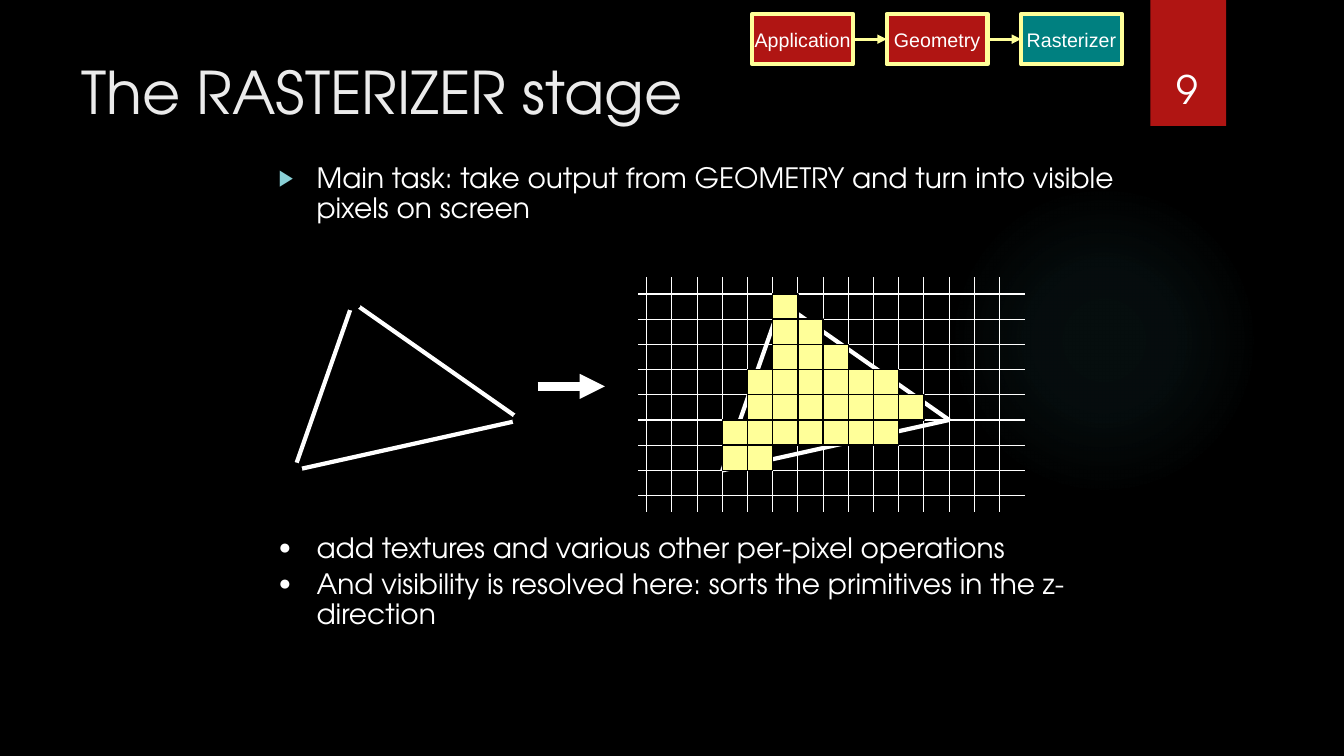
from dataclasses import dataclass

import lxml.etree
import pptx
import pptx.dml.color
import pptx.enum.shapes
import pptx.enum.text
import pptx.oxml
import pptx.oxml.ns
import pptx.util

Pt = pptx.util.Pt
qn = pptx.oxml.ns.qn
SHAPE = pptx.enum.shapes.MSO_SHAPE
ALIGN = pptx.enum.text.PP_ALIGN
ANCHOR = pptx.enum.text.MSO_ANCHOR

HEADING_FONT = "TeX Gyre Adventor"
BLACK, WHITE, RED, TEAL, YELLOW = "000000", "FFFFFF", "B01513", "008080", "FFFF99"

CELL = 18
GRID_LEFT, GRID_TOP = 462, 210
GRID_COLUMNS, GRID_ROWS = 15, 9
TRIANGLE = [(210, 336), (252, 216), (372, 300)]
TRIANGLE_SHIFT = 306
VERTEX_SIZE = 12
STAGE_LEFT, STAGE_TOP, STAGE_STEP = 537.4, 10, 96
STAGE_WIDTH, STAGE_HEIGHT = 72, 36


@dataclass
class Bullet:
    symbol: str
    color: str
    percent: int


@dataclass
class TextBlock:
    box: tuple[float, float, float, float]
    lines: list[str]
    size: float
    color: str = WHITE
    bullet: Bullet | None = None
    align: ALIGN = ALIGN.LEFT
    anchor: ANCHOR = ANCHOR.TOP


@dataclass
class Stage:
    name: str
    fill: str


@dataclass
class PixelRun:
    """Filled cells of one grid row, first to last column."""
    first: int
    last: int


TEXTS = [
    TextBlock((51, 36, 741, 110), ["The RASTERIZER stage"], 42, "EBEBEB"),
    TextBlock((192, 114, 630, 78),
              ["Main task: take output from GEOMETRY and turn into visible pixels on screen"],
              20, bullet=Bullet("▶", "8AD0D6", 80)),
    TextBlock((192, 378, 630, 138),
              ["add textures and various other per-pixel operations",
               "And visibility is resolved here: sorts the primitives in the z-direction"],
              20, bullet=Bullet("●", WHITE, 75)),
    TextBlock((815, 23, 66, 60.5), ["9"], 28, align=ALIGN.CENTER, anchor=ANCHOR.BOTTOM),
]
STAGES = [Stage("Application", RED), Stage("Geometry", RED), Stage("Rasterizer", TEAL)]
PIXEL_RUNS = [PixelRun(5, 5), PixelRun(5, 6), PixelRun(5, 7), PixelRun(4, 9),
              PixelRun(4, 10), PixelRun(3, 9), PixelRun(3, 4)]


def rgb(value: str) -> pptx.dml.color.RGBColor:
    return pptx.dml.color.RGBColor.from_string(value)


def set_values(target: object, values: dict[str, object]) -> None:
    for name, value in values.items():
        setattr(target, name, value)


def set_font(font: pptx.text.text.Font, name: str, size: float, color: str) -> None:
    set_values(font, {"name": name, "size": Pt(size)})
    font.color.rgb = rgb(color)


def add_figure(shapes, kind: SHAPE, box: tuple, fill: str, line: str = "", width: float = 0):
    shape = shapes.add_shape(kind, *map(Pt, box))
    shape.shadow.inherit = False
    shape.fill.solid()
    shape.fill.fore_color.rgb = rgb(fill)
    if line:
        shape.line.color.rgb = rgb(line)
        shape.line.width = Pt(width)
    else:
        shape.line.fill.background()
    return shape


def add_line(shapes, start: tuple, end: tuple, color: str, width: float,
             arrow: bool = False) -> None:
    connector = shapes.add_connector(pptx.enum.shapes.MSO_CONNECTOR.STRAIGHT,
                                     *map(Pt, (*start, *end)))
    connector.line.color.rgb = rgb(color)
    connector.line.width = Pt(width)
    if arrow:
        outline = connector.line._get_or_add_ln()
        lxml.etree.SubElement(outline, qn("a:tailEnd"), type="triangle")
    lxml.etree.SubElement(connector._element.spPr, qn("a:effectLst"))


def add_bullet(paragraph, bullet: Bullet) -> None:
    properties = paragraph._p.get_or_add_pPr()
    properties.set("marL", str(Pt(27)))
    properties.set("indent", str(Pt(-27)))
    color = lxml.etree.SubElement(properties, qn("a:buClr"))
    lxml.etree.SubElement(color, qn("a:srgbClr"), val=bullet.color)
    lxml.etree.SubElement(properties, qn("a:buSzPct"), val=str(bullet.percent * 1000))
    lxml.etree.SubElement(properties, qn("a:buFont"), typeface="Arial")
    lxml.etree.SubElement(properties, qn("a:buChar"), char=bullet.symbol)


def add_text(shapes, block: TextBlock) -> None:
    frame = shapes.add_textbox(*map(Pt, block.box)).text_frame
    set_values(frame, {"word_wrap": True, "vertical_anchor": block.anchor})
    for index, line in enumerate(block.lines):
        paragraph = frame.add_paragraph() if index else frame.paragraphs[0]
        paragraph.alignment = block.align
        if block.bullet:
            add_bullet(paragraph, block.bullet)
            paragraph.line_spacing = 0.9
        if index:
            paragraph.space_before = Pt(4)
        run = paragraph.add_run()
        run.text = line
        set_font(run.font, HEADING_FONT, block.size, block.color)


def add_glow(shapes) -> None:
    """Faint disc that fades out from its centre."""
    glow = add_figure(shapes, SHAPE.OVAL, (677.5, 131.8, 221.8, 221.8), BLACK)
    stops = "".join(
        f'<a:gs pos="{position}000"><a:srgbClr val="50B9C1">'
        f'<a:alpha val="{alpha}000"/></a:srgbClr></a:gs>'
        for position, alpha in [(0, 7), (36, 6), (69, 0), (100, 0)])
    gradient = pptx.oxml.parse_xml(
        f'<a:gradFill {pptx.oxml.ns.nsdecls("a")}><a:gsLst>{stops}</a:gsLst>'
        '<a:path path="circle"><a:fillToRect l="50000" t="50000" r="50000" b="50000"/>'
        '</a:path></a:gradFill>')
    properties = glow._element.spPr
    properties.replace(properties.find(qn("a:solidFill")), gradient)


def add_triangle(shapes, shift: float = 0) -> None:
    low, top, right = [(x + shift, y) for x, y in TRIANGLE]
    for start, end in [(low, top), (top, right), (low, right)]:
        add_line(shapes, start, end, WHITE, 3)


def add_rasterization(shapes) -> None:
    add_triangle(shapes)
    for x, y in TRIANGLE:
        box = (x - VERTEX_SIZE / 2, y - VERTEX_SIZE / 2, VERTEX_SIZE, VERTEX_SIZE)
        add_figure(shapes, SHAPE.OVAL, box, BLACK)
    add_triangle(shapes, TRIANGLE_SHIFT)
    for row in range(GRID_ROWS):
        y = GRID_TOP + row * CELL
        add_line(shapes, (456, y), (732, y), WHITE, 0.75)
    for column in range(GRID_COLUMNS):
        x = GRID_LEFT + column * CELL
        add_line(shapes, (x, 198), (x, 366), WHITE, 0.75)
    for row, pixels in enumerate(PIXEL_RUNS):
        for column in range(pixels.first, pixels.last + 1):
            box = (GRID_LEFT + column * CELL, GRID_TOP + row * CELL, CELL, CELL)
            add_figure(shapes, SHAPE.RECTANGLE, box, YELLOW, BLACK, 1)
    add_line(shapes, (384, 276), (432, 276), WHITE, 6, arrow=True)


def add_pipeline(shapes) -> None:
    lefts = [STAGE_LEFT + index * STAGE_STEP for index in range(len(STAGES))]
    for left, stage in zip(lefts, STAGES):
        box = (left, STAGE_TOP, STAGE_WIDTH, STAGE_HEIGHT)
        shape = add_figure(shapes, SHAPE.RECTANGLE, box, stage.fill, YELLOW, 3)
        frame = shape.text_frame
        set_values(frame, {"text": stage.name, "word_wrap": False,
                           "vertical_anchor": ANCHOR.MIDDLE})
        frame.paragraphs[0].alignment = ALIGN.CENTER
        set_font(frame.paragraphs[0].runs[0].font, "Arial", 14, WHITE)
    middle = STAGE_TOP + STAGE_HEIGHT / 2
    for left, following in zip(lefts, lefts[1:]):
        add_line(shapes, (left + STAGE_WIDTH, middle), (following, middle), YELLOW, 2.25,
                 arrow=True)


def main() -> None:
    presentation = pptx.Presentation()
    set_values(presentation, {"slide_width": Pt(960), "slide_height": Pt(540)})
    slide = presentation.slides.add_slide(presentation.slide_layouts[6])
    slide.background.fill.solid()
    slide.background.fill.fore_color.rgb = rgb(BLACK)
    add_glow(slide.shapes)
    add_figure(slide.shapes, SHAPE.RECTANGLE, (821.8, 0, 54, 90), RED)
    for block in TEXTS:
        add_text(slide.shapes, block)
    add_rasterization(slide.shapes.add_group_shape().shapes)
    add_pipeline(slide.shapes.add_group_shape().shapes)
    presentation.save("out.pptx")


if __name__ == "__main__":
    main()
